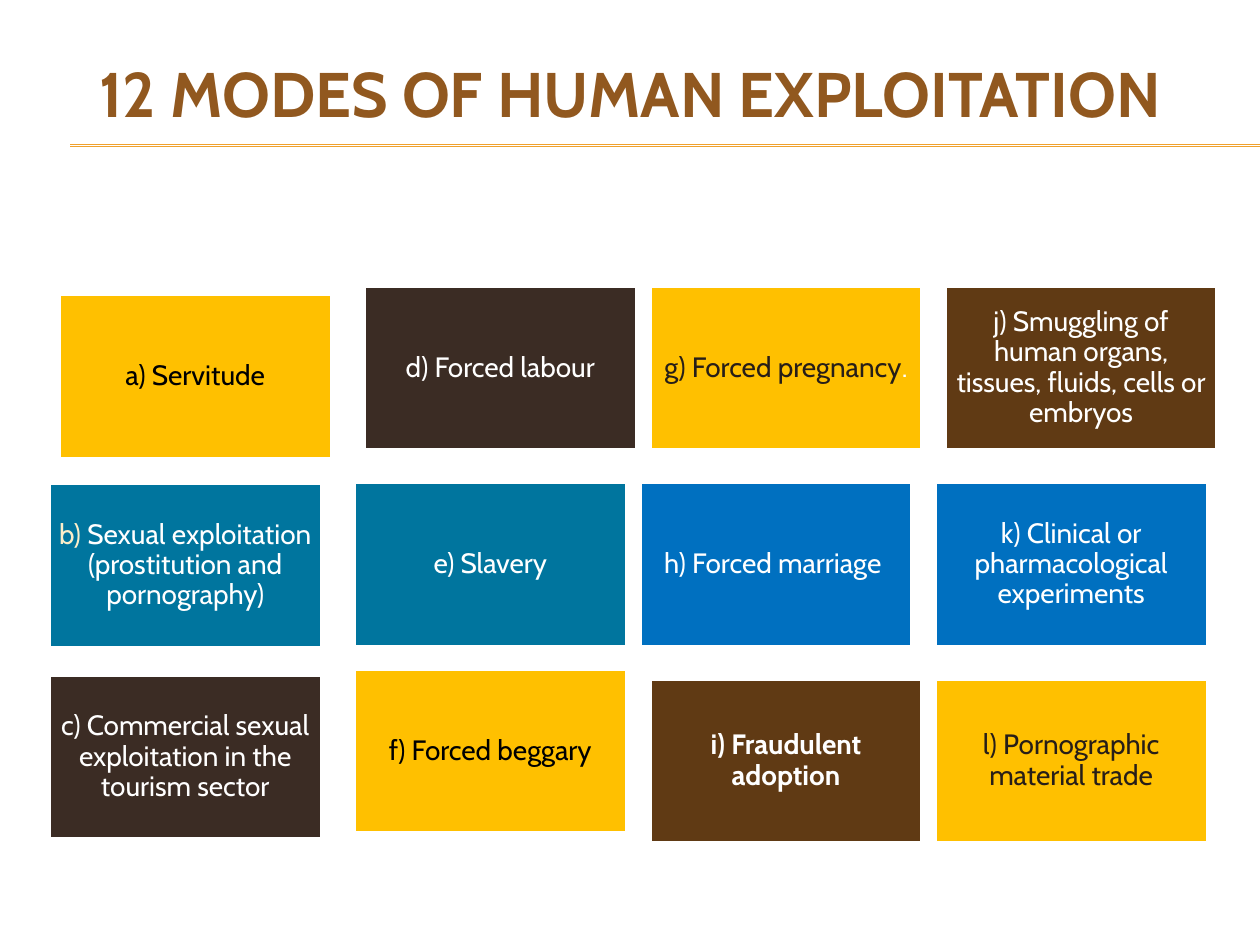
from pptx import Presentation
from pptx.dml.color import RGBColor
from pptx.enum.shapes import MSO_CONNECTOR, MSO_SHAPE
from pptx.enum.text import MSO_ANCHOR, MSO_AUTO_SIZE, PP_ALIGN
from pptx.oxml.ns import qn
from pptx.util import Cm, Pt
from lxml import etree

STRAIGHT = MSO_CONNECTOR.STRAIGHT
RECTANGLE = MSO_SHAPE.RECTANGLE
TOP, MIDDLE = MSO_ANCHOR.TOP, MSO_ANCHOR.MIDDLE
CENTER = PP_ALIGN.CENTER
NO_AUTOFIT = MSO_AUTO_SIZE.NONE

FONT = "Cabin"
WHITE = RGBColor(0xFF, 0xFF, 0xFF)
BLACK = RGBColor(0x00, 0x00, 0x00)
INK = RGBColor(0x27, 0x1E, 0x18)
CREAM = RGBColor(0xFB, 0xEE, 0xC9)
TITLE_BROWN = RGBColor(0x91, 0x58, 0x1F)
RULE_ORANGE = RGBColor(0xF0, 0xA2, 0x2E)
YELLOW = RGBColor(0xFF, 0xC0, 0x00)
DARK = RGBColor(0x3B, 0x2C, 0x24)
BROWN = RGBColor(0x60, 0x3A, 0x14)
TEAL = RGBColor(0x00, 0x75, 0x9E)
BLUE = RGBColor(0x00, 0x70, 0xC0)

TILE_WIDTH, TILE_HEIGHT = 5.49, 3.3
COLUMN_LEFTS = (0, 6.15, 11.91, 17.86)
ROW_TOPS = (0, 3.96, 7.92)
INDENT = 0.2

# Each tile: fill, horizontal shift, vertical shift, bold, runs of (text, colour)
MODES = (
    (
        (YELLOW, INDENT, 0.17, False, [("a) Servitude", BLACK)]),
        (TEAL, 0, 0.02, False, [
            ("b) ", CREAM),
            ("Sexual exploitation (prostitution and pornography)", WHITE)]),
        (DARK, 0, -0.08, False, [
            ("c) Commercial sexual exploitation in the tourism sector", WHITE)]),
    ),
    (
        (DARK, INDENT, 0, False, [("d) Forced labour", WHITE)]),
        (TEAL, 0, 0, False, [("e) Slavery", WHITE)]),
        (YELLOW, 0, -0.2, False, [("f) Forced beggary", BLACK)]),
    ),
    (
        (YELLOW, INDENT, 0, False, [("g) Forced pregnancy", INK), (".", WHITE)]),
        (BLUE, 0, 0, False, [("h) Forced marriage ", WHITE)]),
        (BROWN, INDENT, 0, True, [("i) Fraudulent adoption", WHITE)]),
    ),
    (
        (BROWN, INDENT, 0, False, [
            ("j) Smuggling of human organs, tissues, fluids, cells or embryos", WHITE)]),
        (BLUE, 0, 0, False, [
            ("k) Clinical or pharmacological experiments", WHITE)]),
        (YELLOW, 0, 0, False, [("l) Pornographic material trade", INK)]),
    ),
)


def add_run(paragraph, text, size, color, bold):
    """Append one formatted run to the paragraph."""
    run = paragraph.add_run()
    run.text = text
    run.font.name = FONT
    run.font.size = Pt(size)
    run.font.bold = bold
    run.font.color.rgb = color


def add_rule(slide, left, top, right):
    """Draw a thin horizontal rule without a shadow."""
    rule = slide.shapes.add_connector(STRAIGHT, Cm(left), Cm(top), Cm(right), Cm(top))
    rule.line.color.rgb = RULE_ORANGE
    rule.line.width = Pt(0.75)
    etree.SubElement(rule._element.spPr, qn("a:effectLst"))


def add_heading(slide, left, top, width, height):
    """Place the title and the double rule that crosses its box."""
    for offset in (2.16, 2.19):
        add_rule(slide, left + 0.63, top + offset, 25.4)
    title = slide.shapes.title
    title.left, title.top = Cm(left), Cm(top)
    title.width, title.height = Cm(width), Cm(height)
    frame = title.text_frame
    frame.auto_size = NO_AUTOFIT
    frame.vertical_anchor = TOP
    frame.margin_top = Cm(0.33)
    paragraph = frame.paragraphs[0]
    paragraph.alignment = CENTER
    add_run(paragraph, "12 MODES OF HUMAN EXPLOITATION", 36, TITLE_BROWN, True)


def add_tile(slide, left, top, fill, bold, runs):
    """Draw one coloured tile with its centred label."""
    tile = slide.shapes.add_shape(
        RECTANGLE, Cm(left), Cm(top), Cm(TILE_WIDTH), Cm(TILE_HEIGHT))
    tile.shadow.inherit = False
    tile.fill.solid()
    tile.fill.fore_color.rgb = fill
    tile.line.color.rgb = WHITE
    tile.line.width = Pt(2)
    frame = tile.text_frame
    frame.word_wrap = True
    frame.vertical_anchor = MIDDLE
    frame.margin_left = frame.margin_right = Cm(0.17)
    frame.margin_top = frame.margin_bottom = Cm(0.17)
    paragraph = frame.paragraphs[0]
    paragraph.alignment = CENTER
    paragraph.line_spacing = 0.9
    for text, color in runs:
        add_run(paragraph, text, 16, color, bold)


def add_modes(slide, left, top):
    """Lay out the tiles column by column from the given corner."""
    for column_left, column in zip(COLUMN_LEFTS, MODES):
        for row_top, (fill, shift_x, shift_y, bold, runs) in zip(ROW_TOPS, column):
            add_tile(slide, left + column_left + shift_x,
                     top + row_top + shift_y, fill, bold, runs)


def main():
    """Build and save the presentation."""
    presentation = Presentation()
    presentation.slide_width, presentation.slide_height = Cm(25.4), Cm(19.05)
    slide = presentation.slides.add_slide(presentation.slide_layouts[5])
    add_heading(slide, 0.79, 0.76, 23.83, 3.61)
    add_modes(slide, 0.99, 5.77)
    presentation.save("out.pptx")


if __name__ == "__main__":
    main()
